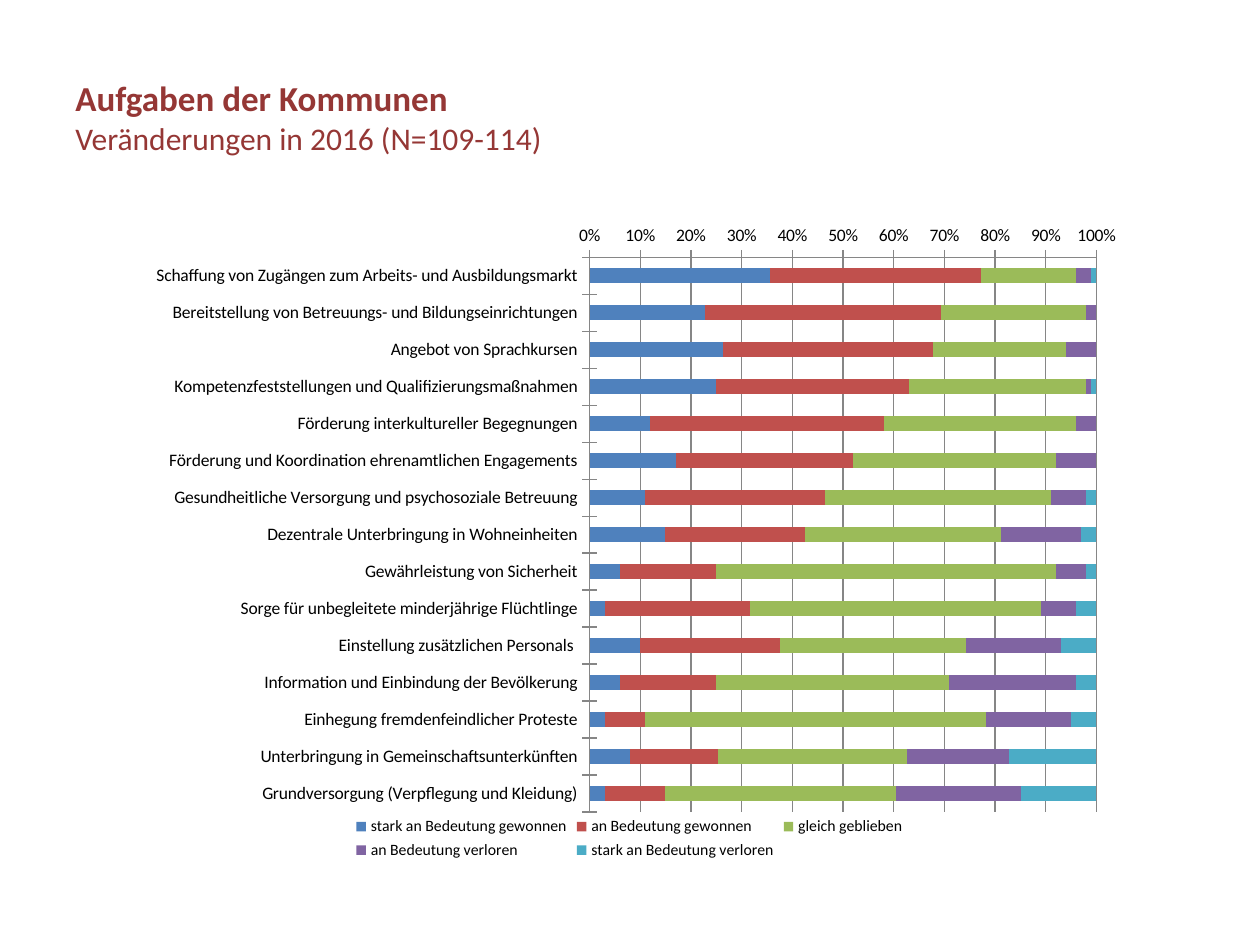
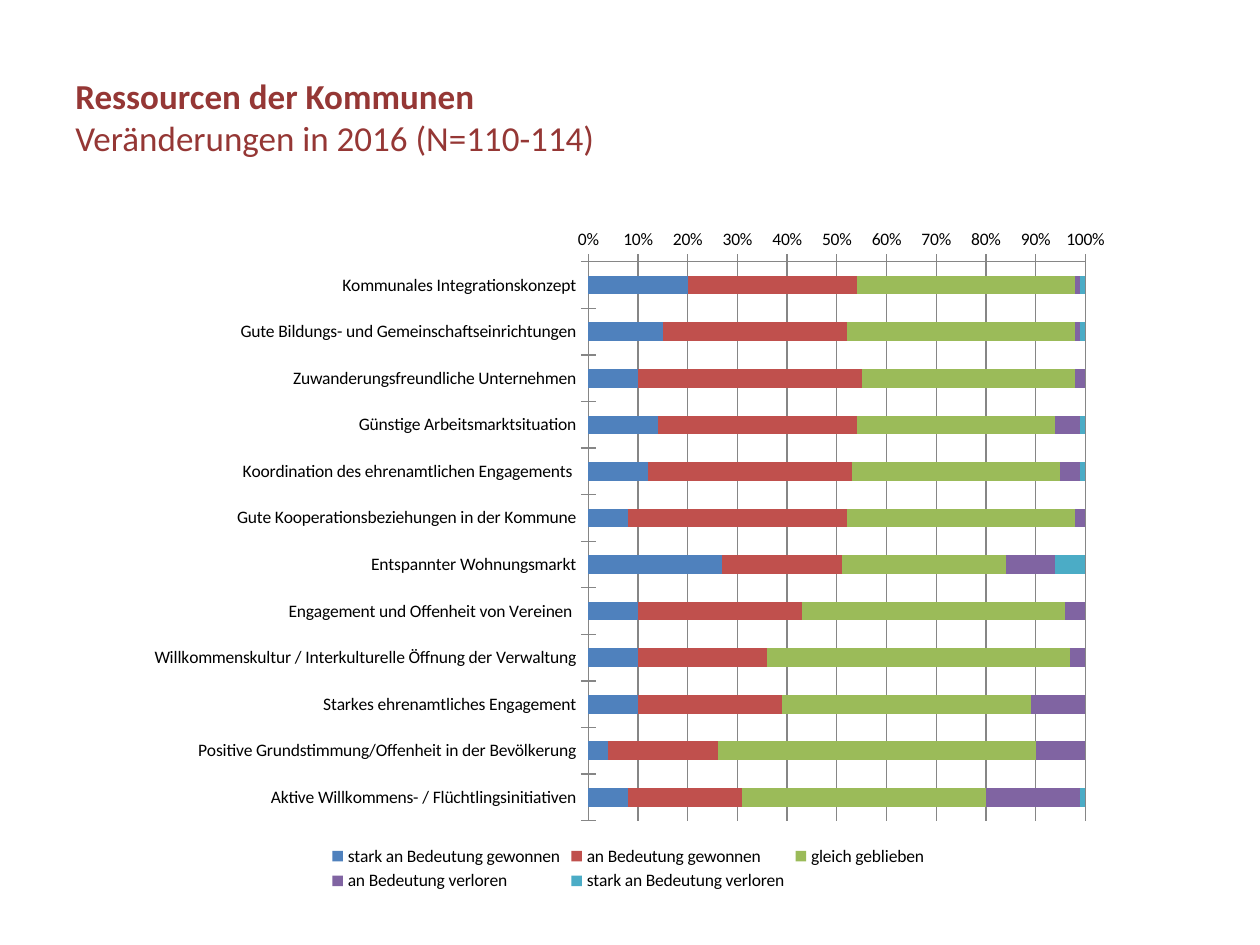
import lxml.etree
import pptx
import pptx.chart.data
import pptx.dml.color
import pptx.enum.chart
import pptx.enum.text
import pptx.oxml.ns
import pptx.util

# Shared look; the grid has 100 columns and 75 rows
COLUMNS, ROWS = 100, 75
FONT = "Calibri"
TITLE_COLOR, TEXT_COLOR, LINE_COLOR = "953735", "000000", "868686"
TITLE_BOX = (5, 3, 90, 12.5)
RATINGS = {
    "stark an Bedeutung gewonnen": "4F81BD",
    "an Bedeutung gewonnen": "C0504D",
    "gleich geblieben": "9BBB59",
    "an Bedeutung verloren": "8064A2",
    "stark an Bedeutung verloren": "4BACC6",
}

# Each row: label and its percentages in the order of RATINGS
TASKS = [
    ("Schaffung von Zugängen zum Arbeits- und Ausbildungsmarkt", 36, 42, 19, 3, 1),
    ("Bereitstellung von Betreuungs- und Bildungseinrichtungen", 23, 47, 29, 2, 0),
    ("Angebot von Sprachkursen", 26, 41, 26, 6, 0),
    ("Kompetenzfeststellungen und Qualifizierungsmaßnahmen", 25, 38, 35, 1, 1),
    ("Förderung interkultureller Begegnungen", 12, 46, 38, 4, 0),
    ("Förderung und Koordination ehrenamtlichen Engagements", 17, 35, 40, 8, 0),
    ("Gesundheitliche Versorgung und psychosoziale Betreuung", 11, 36, 45, 7, 2),
    ("Dezentrale Unterbringung in Wohneinheiten", 15, 28, 39, 16, 3),
    ("Gewährleistung von Sicherheit", 6, 19, 67, 6, 2),
    ("Sorge für unbegleitete minderjährige Flüchtlinge", 3, 29, 58, 7, 4),
    ("Einstellung zusätzlichen Personals ", 10, 28, 37, 19, 7),
    ("Information und Einbindung der Bevölkerung", 6, 19, 46, 25, 4),
    ("Einhegung fremdenfeindlicher Proteste", 3, 8, 68, 17, 5),
    ("Unterbringung in Gemeinschaftsunterkünften", 8, 17, 37, 20, 17),
    ("Grundversorgung (Verpflegung und Kleidung)", 3, 12, 46, 25, 15),
]
RESOURCES = [
    ("Kommunales Integrationskonzept", 20, 34, 44, 1, 1),
    ("Gute Bildungs- und Gemeinschaftseinrichtungen", 15, 37, 46, 1, 1),
    ("Zuwanderungsfreundliche Unternehmen", 10, 45, 43, 2, 0),
    ("Günstige Arbeitsmarktsituation", 14, 40, 40, 5, 1),
    ("Koordination des ehrenamtlichen Engagements ", 12, 41, 42, 4, 1),
    ("Gute Kooperationsbeziehungen in der Kommune", 8, 44, 46, 2, 0),
    ("Entspannter Wohnungsmarkt", 27, 24, 33, 10, 6),
    ("Engagement und Offenheit von Vereinen ", 10, 33, 53, 4, 0),
    ("Willkommenskultur / Interkulturelle Öffnung der Verwaltung", 10, 26, 61, 3, 0),
    ("Starkes ehrenamtliches Engagement", 10, 29, 50, 11, 0),
    ("Positive Grundstimmung/Offenheit in der Bevölkerung", 4, 22, 64, 10, 0),
    ("Aktive Willkommens- / Flüchtlingsinitiativen", 8, 23, 49, 19, 1),
]


def color(value):
    return pptx.dml.color.RGBColor.from_string(value)


def place(deck, box):
    """Turn a box in columns and rows into slide lengths."""
    column, row = deck.slide_width / COLUMNS, deck.slide_height / ROWS
    left, top, width, height = box
    return [round(n) for n in (left * column, top * row, width * column, height * row)]


def style_font(font, size, value, bold=False):
    font.name, font.size, font.bold = FONT, pptx.util.Pt(size), bold
    font.color.rgb = color(value)


def add_title(deck, page, box, heading, subtitle, subtitle_size):
    frame = page.shapes.add_textbox(*place(deck, box)).text_frame
    frame.word_wrap = True
    frame.vertical_anchor = pptx.enum.text.MSO_ANCHOR.MIDDLE
    para = frame.paragraphs[0]
    span = para.add_run()
    span.text = heading
    style_font(span.font, 20, TITLE_COLOR, bold=True)
    para.add_line_break()
    span = para.add_run()
    span.text = subtitle
    style_font(span.font, subtitle_size, TITLE_COLOR)


def set_plot_area(chart, shares):
    """Fix the inner plot area as shares of the chart's size."""
    qn = pptx.oxml.ns.qn
    area = chart.plots[0]._element.getparent()
    for old in area.findall(qn("c:layout")):
        area.remove(old)
    layout = lxml.etree.Element(qn("c:layout"))
    manual = lxml.etree.SubElement(layout, qn("c:manualLayout"))
    settings = [("layoutTarget", "inner"), ("xMode", "edge"), ("yMode", "edge")]
    settings += zip("xywh", shares)
    for name, value in settings:
        lxml.etree.SubElement(manual, qn("c:" + name)).set("val", str(value))
    area.insert(0, layout)


def add_rating_chart(deck, page, box, rows, plot_shares, legend_size):
    data = pptx.chart.data.CategoryChartData(number_format="0")
    labels, *columns = zip(*rows)
    data.categories = labels
    for name, values in zip(RATINGS, columns):
        data.add_series(name, values)
    kind = pptx.enum.chart.XL_CHART_TYPE.BAR_STACKED_100
    chart = page.shapes.add_chart(kind, *place(deck, box), data).chart
    style_font(chart.font, 10, TEXT_COLOR)
    chart.has_title = False

    # Bars
    plot = chart.plots[0]
    plot.vary_by_categories = False
    plot.gap_width, plot.overlap = 150, 100
    for series, value in zip(plot.series, RATINGS.values()):
        series.format.fill.solid()
        series.format.fill.fore_color.rgb = color(value)

    # Axes
    chart.category_axis.reverse_order = True
    value_axis = chart.value_axis
    value_axis.has_major_gridlines = True
    value_axis.minimum_scale, value_axis.maximum_scale = 0, 1
    value_axis.major_unit = 0.1
    value_axis.tick_labels.number_format = "0%"
    value_axis.tick_labels.number_format_is_linked = False
    for axis in (chart.category_axis, value_axis):
        axis.major_tick_mark = pptx.enum.chart.XL_TICK_MARK.CROSS
    for part in (chart.category_axis, value_axis, value_axis.major_gridlines):
        part.format.line.color.rgb = color(LINE_COLOR)
        part.format.line.width = pptx.util.Pt(0.75)

    # Legend
    chart.has_legend = True
    chart.legend.position = pptx.enum.chart.XL_LEGEND_POSITION.BOTTOM
    chart.legend.include_in_layout = False
    style_font(chart.legend.font, legend_size, TEXT_COLOR)
    set_plot_area(chart, plot_shares)


def add_rating_page(deck, title, chart):
    page = deck.slides.add_slide(deck.slide_layouts[6])
    add_title(deck, page, TITLE_BOX, *title)
    add_rating_chart(deck, page, *chart)


def main():
    deck = pptx.Presentation()
    deck.slide_width, deck.slide_height = pptx.util.Inches(10), pptx.util.Inches(7.5)
    add_rating_page(
        deck,
        ("Aufgaben der Kommunen", "Veränderungen in 2016 (N=109-114)", 18),
        ((10.5, 16.8, 78.9, 51.8), TASKS, (0.46, 0.07, 0.51, 0.85), 9),
    )
    add_rating_page(
        deck,
        ("Ressourcen der Kommunen", "Veränderungen in 2016 (N=110-114)", 20),
        ((10.4, 17, 78.9, 54.1), RESOURCES, (0.46, 0.07, 0.5, 0.82), 10),
    )
    deck.save("out.pptx")


if __name__ == "__main__":
    main()
